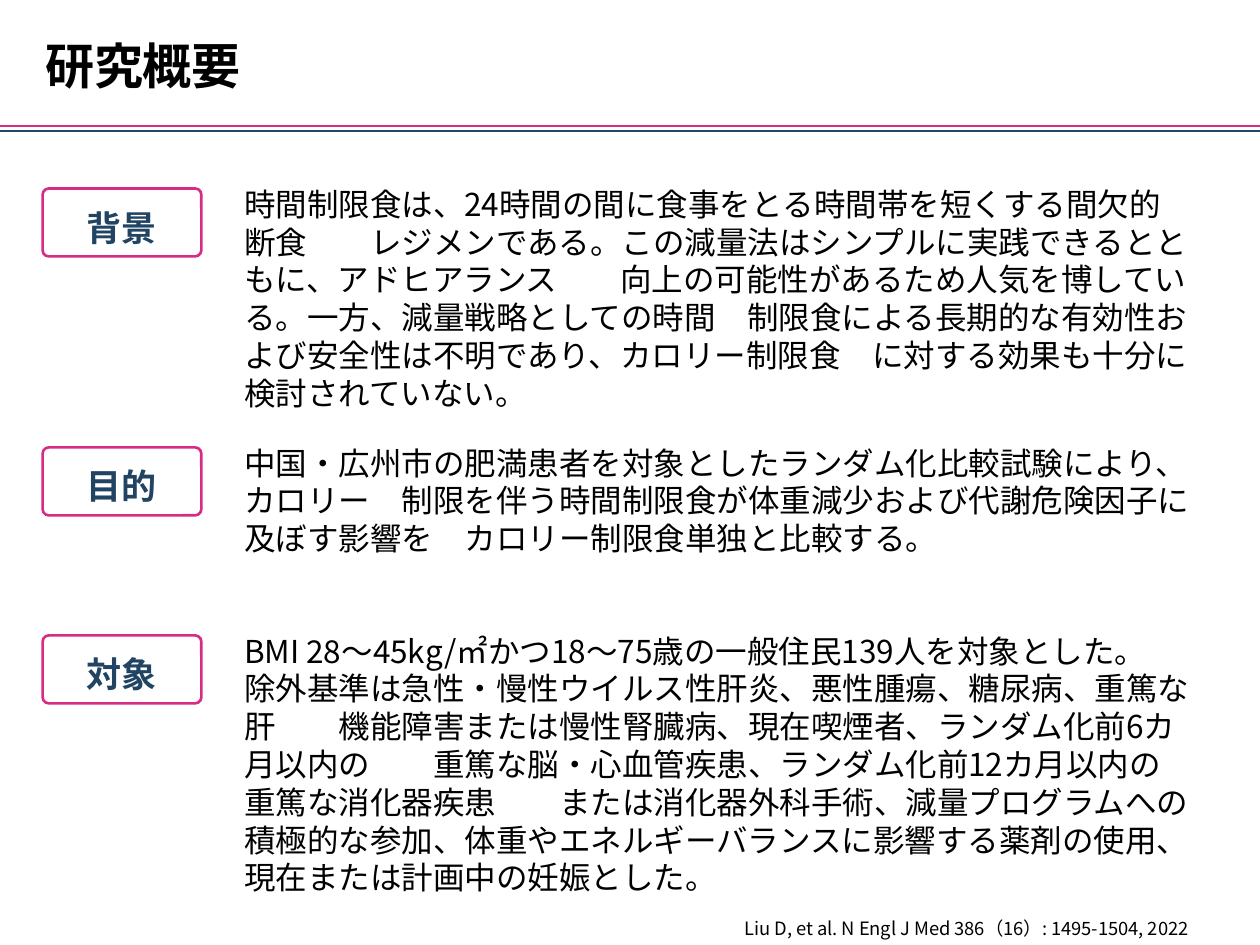
"""Build the study overview slide with background, aim and subjects."""
from lxml.etree import SubElement
from pptx import Presentation
from pptx.dml.color import RGBColor
from pptx.enum.lang import MSO_LANGUAGE_ID
from pptx.enum.shapes import MSO_CONNECTOR, MSO_SHAPE
from pptx.enum.text import MSO_ANCHOR, MSO_AUTO_SIZE, PP_ALIGN
from pptx.oxml.ns import qn
from pptx.util import Cm, Pt

FONT = "Noto Sans CJK JP"
PINK = "D82B83"
NAVY = "224463"


def color(value):
    return RGBColor.from_string(value)


def add_text(shapes, text, left, top, width, height, size=18, fill="000000", bold=False,
             align=None, spacing=None, anchor=MSO_ANCHOR.TOP, wrap=True):
    box = shapes.add_textbox(Cm(left), Cm(top), Cm(width), Cm(height))
    frame = box.text_frame
    frame.word_wrap = wrap
    frame.auto_size = MSO_AUTO_SIZE.SHAPE_TO_FIT_TEXT
    frame.vertical_anchor = anchor
    frame.text = text
    for para in frame.paragraphs:
        para.alignment = align
        para.line_spacing = spacing
        for span in para.runs:
            span.font.size = Pt(size)
            span.font.bold = bold
            span.font.color.rgb = color(fill)
            span.font.name = FONT
            span.font.language_id = MSO_LANGUAGE_ID.JAPANESE
            SubElement(span.font._element, qn("a:ea"), typeface=FONT)


deck = Presentation()
deck.slide_width = Cm(25.4)
deck.slide_height = Cm(19.05)
page = deck.slides.add_slide(deck.slide_layouts[6])

for rule_top, rule_color in ((2.64, NAVY), (2.54, PINK)):
    rule = page.shapes.add_connector(
        MSO_CONNECTOR.STRAIGHT, Cm(0), Cm(rule_top), deck.slide_width, Cm(rule_top))
    rule.line.color.rgb = color(rule_color)
    rule.line.width = Pt(1.5)
    SubElement(rule._element.spPr, qn("a:effectLst"))

add_text(page.shapes, "研究概要", 0.66, 0.58, 4.5, 1.45, size=28, bold=True,
         anchor=MSO_ANCHOR.MIDDLE, wrap=False)

sections = [
    ("背景", 3.8, 4.11,
     "時間制限食は、24時間の間に食事をとる時間帯を短くする間欠的断食　　レジメンである。"
     "この減量法はシンプルに実践できるとともに、アドヒアランス　　向上の可能性があるため人気を博している。"
     "一方、減量戦略としての時間　制限食による長期的な有効性および安全性は不明であり、"
     "カロリー制限食　に対する効果も十分に検討されていない。"),
    ("目的", 9.02, 2.57,
     "中国・広州市の肥満患者を対象としたランダム化比較試験により、"
     "カロリー　制限を伴う時間制限食が体重減少および代謝危険因子に及ぼす影響を　"
     "カロリー制限食単独と比較する。"),
    ("対象", 12.81, 4.88,
     "BMI 28～45kg/㎡かつ18～75歳の一般住民139人を対象とした。\n"
     "除外基準は急性・慢性ウイルス性肝炎、悪性腫瘍、糖尿病、重篤な肝　　機能障害または慢性腎臓病、"
     "現在喫煙者、ランダム化前6カ月以内の　　重篤な脳・心血管疾患、"
     "ランダム化前12カ月以内の重篤な消化器疾患　　または消化器外科手術、"
     "減量プログラムへの積極的な参加、体重やエネルギーバランスに影響する薬剤の使用、"
     "現在または計画中の妊娠とした。"),
]

for label, top, body_height, body in sections:
    group = page.shapes.add_group_shape()
    frame_box = group.shapes.add_shape(
        MSO_SHAPE.ROUNDED_RECTANGLE, Cm(0.86), Cm(top), Cm(3.2), Cm(1.37))
    frame_box.adjustments[0] = 0.09
    frame_box.shadow.inherit = False
    frame_box.fill.background()
    frame_box.line.color.rgb = color(PINK)
    frame_box.line.width = Pt(1.5)
    add_text(group.shapes, label, 1.47, top + 0.06, 1.98, 1.17, size=20, fill=NAVY,
             bold=True, align=PP_ALIGN.CENTER, spacing=1.2)
    add_text(page.shapes, body, 4.67, top - 0.2, 19.61, body_height)

add_text(page.shapes, "Liu D, et al. N Engl J Med 386（16）: 1495-1504, 2022",
         14.76, 18.31, 10.64, 0.74, size=10.5, anchor=MSO_ANCHOR.BOTTOM)

deck.save("out.pptx")
